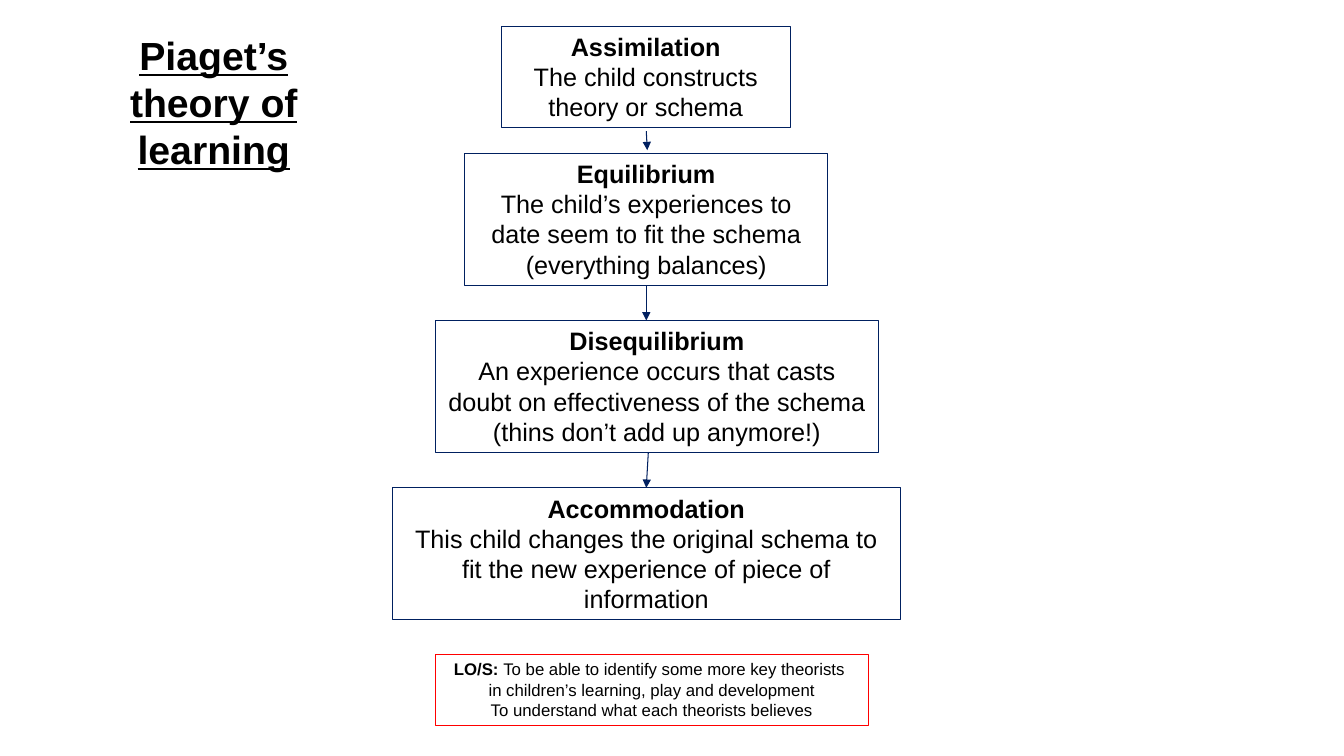
from pptx import Presentation
from pptx.dml.color import RGBColor
from pptx.enum.shapes import MSO_CONNECTOR, MSO_SHAPE
from pptx.enum.text import MSO_ANCHOR, MSO_AUTO_SIZE, PP_ALIGN
from pptx.oxml.ns import qn
from pptx.util import Emu, Pt
from lxml import etree

RECTANGLE = MSO_SHAPE.RECTANGLE
STRAIGHT = MSO_CONNECTOR.STRAIGHT
CENTER = PP_ALIGN.CENTER
TOP = MSO_ANCHOR.TOP
NO_AUTOFIT = MSO_AUTO_SIZE.NONE

PX = 9144
THEME = {
    "font": "Arial",
    "text": RGBColor(0, 0, 0),
    "navy": RGBColor(0x00, 0x20, 0x60),
    "red": RGBColor(0xFF, 0x00, 0x00),
    "title": Pt(28),
    "body": Pt(18),
    "small": Pt(12),
    "line": Pt(0.75),
}


def px(*lengths):
    return [Emu(length * PX) for length in lengths]


def write(shape, paragraphs, size, underline=False):
    frame = shape.text_frame
    frame.word_wrap = True
    frame.auto_size = NO_AUTOFIT
    frame.vertical_anchor = TOP
    frame.margin_left, frame.margin_right = px(10, 10)
    frame.margin_top, frame.margin_bottom = px(5, 5)
    for index, spans in enumerate(paragraphs):
        para = frame.add_paragraph() if index else frame.paragraphs[0]
        para.alignment = CENTER
        for words, bold in spans:
            for number, line in enumerate(words.split("\n")):
                if number:
                    para.add_line_break()
                span = para.add_run()
                span.text = line
                span.font.name = THEME["font"]
                span.font.size = size
                span.font.bold = bold
                span.font.underline = underline
                span.font.color.rgb = THEME["text"]


deck = Presentation()
deck.slide_width, deck.slide_height = px(1333, 750)
page = deck.slides.add_slide(deck.slide_layouts[5])

title = page.shapes.title
title.left, title.top, title.width, title.height = px(74, 26, 276, 151)
write(title, [[("Piaget’s theory of learning", True)]], THEME["title"], True)

stages = [
    (497, 26, 287, 101, "Assimilation", "The child constructs theory or schema"),
    (461, 152, 360, 131, "Equilibrium",
     "The child’s experiences to date seem to fit the schema (everything balances)"),
    (432, 318, 439, 131, "Disequilibrium",
     "An experience occurs that casts doubt on effectiveness of the schema "
     "(thins don’t add up anymore!)"),
    (389, 484, 504, 131, "Accommodation",
     "This child changes the original schema to fit the new experience of piece of information"),
]
boxes = [
    (place, [[(name, True)], [(meaning, False)]], THEME["body"], THEME["navy"])
    for *place, name, meaning in stages
]
objective = [
    [("LO/S: ", True),
     ("To be able to identify some more key theorists \n"
      "in children’s learning, play and development", False)],
    [("To understand what each theorists believes", False)],
]
boxes.append(((432, 649, 429, 71), objective, THEME["small"], THEME["red"]))

for place, paragraphs, size, border in boxes:
    box = page.shapes.add_shape(RECTANGLE, *px(*place))
    box.shadow.inherit = False
    box.fill.background()
    box.line.color.rgb = border
    box.line.width = THEME["line"]
    write(box, paragraphs, size)

for ends in [(641, 130, 642, 149), (641, 283, 641, 318), (643, 449, 641, 484)]:
    arrow = page.shapes.add_connector(STRAIGHT, *px(*ends))
    arrow.line.color.rgb = THEME["navy"]
    arrow.line.width = THEME["line"]
    etree.SubElement(arrow.line._get_or_add_ln(), qn("a:tailEnd"), type="triangle")
    etree.SubElement(arrow._element.spPr, qn("a:effectLst"))

deck.save("out.pptx")
